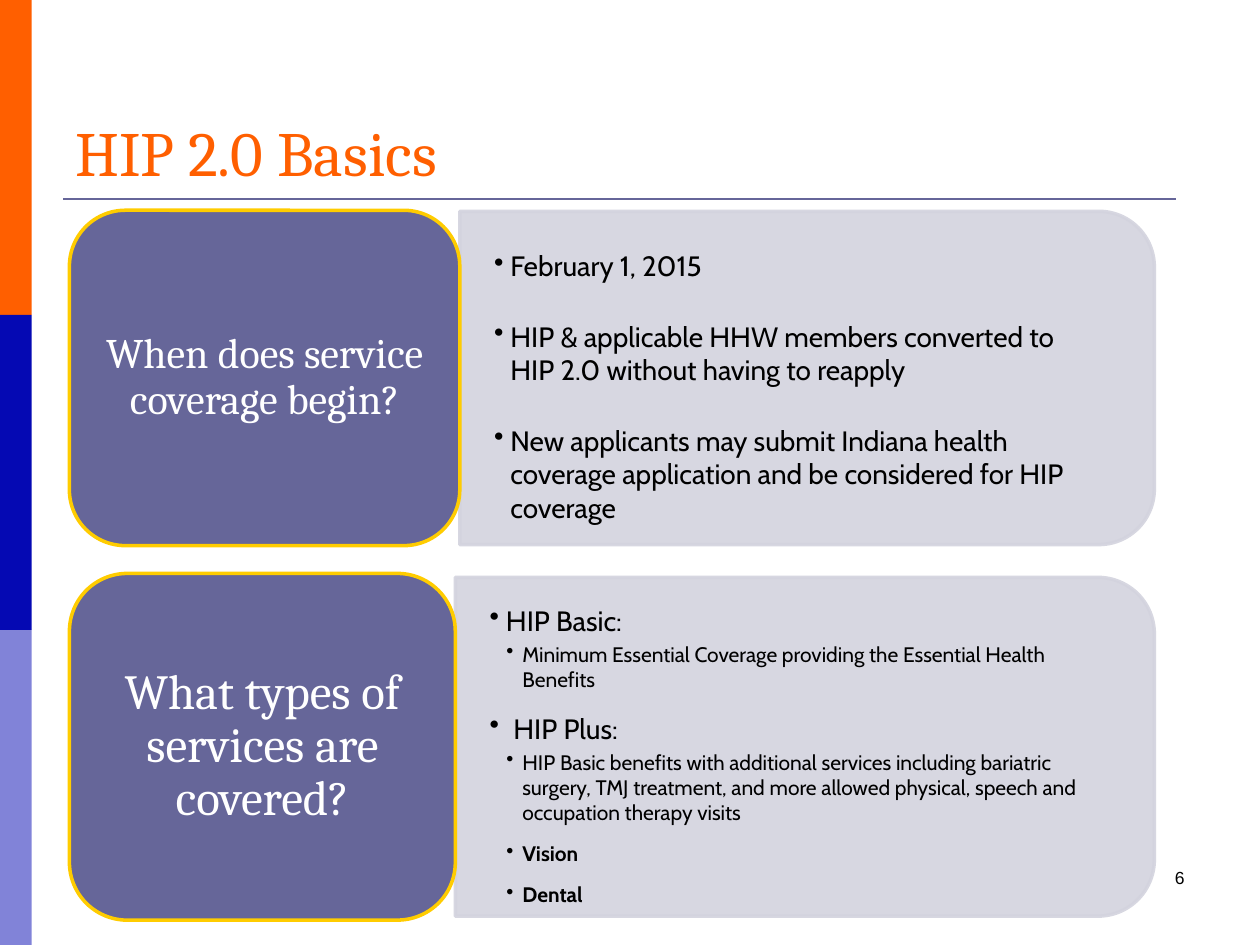
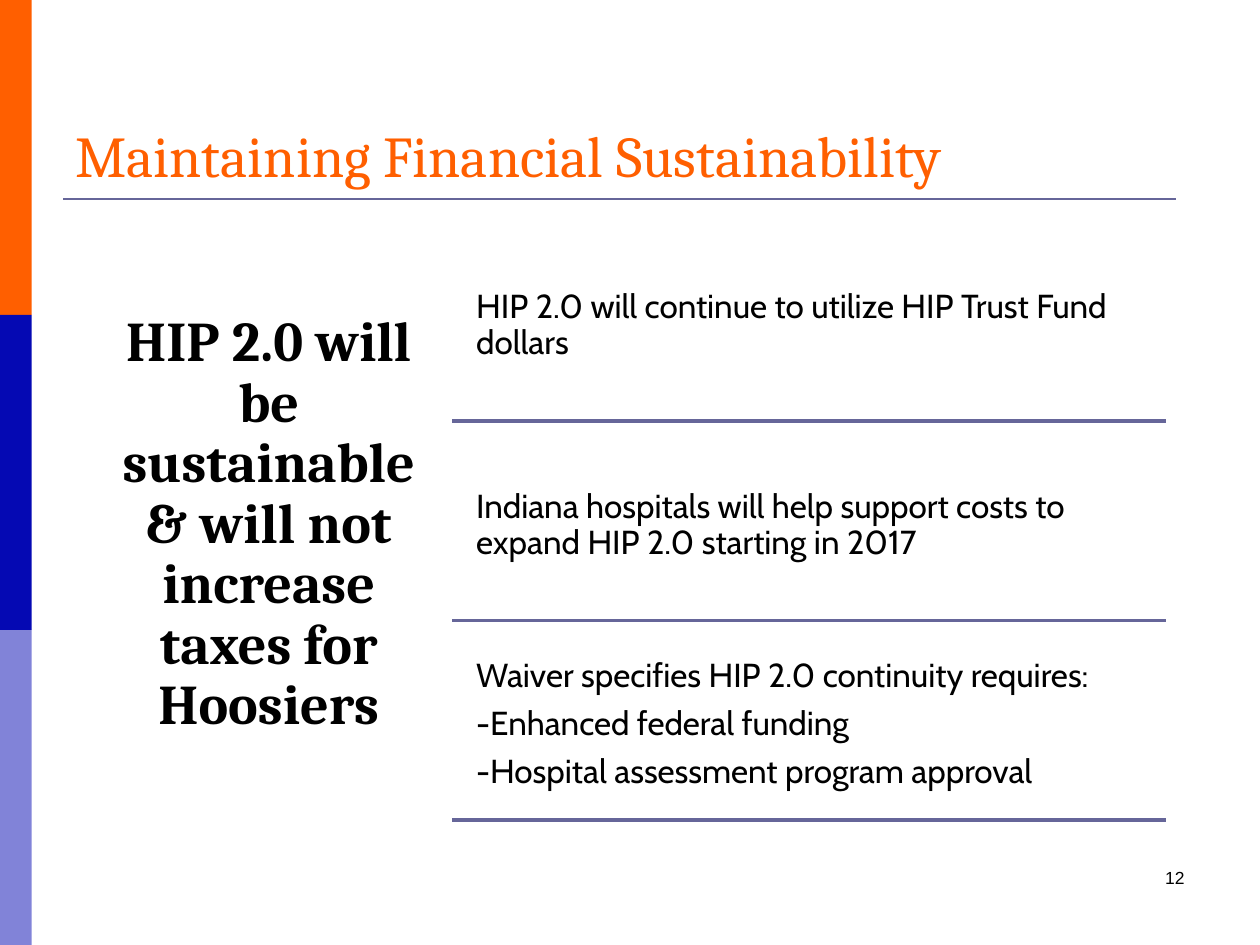
from dataclasses import dataclass

from lxml import etree
from pptx import Presentation
from pptx.dml.color import RGBColor
from pptx.enum.shapes import MSO_CONNECTOR, MSO_SHAPE
from pptx.enum.text import MSO_ANCHOR, MSO_AUTO_SIZE, PP_ALIGN
from pptx.oxml.ns import qn
from pptx.util import Cm, Pt

RECT = MSO_SHAPE.RECTANGLE
ROUND = MSO_SHAPE.ROUNDED_RECTANGLE
TAB = MSO_SHAPE.ROUND_2_SAME_RECTANGLE
LINE = MSO_CONNECTOR.STRAIGHT
LEFT, MID, RIGHT = PP_ALIGN.LEFT, PP_ALIGN.CENTER, PP_ALIGN.RIGHT
TOP, CENTER, BOTTOM = MSO_ANCHOR.TOP, MSO_ANCHOR.MIDDLE, MSO_ANCHOR.BOTTOM


@dataclass(frozen=True)
class Theme:
    orange: str = "FF5F00"
    navy: str = "0509B3"
    slate: str = "666699"
    gold: str = "FFCC00"
    mist: str = "D3D3DE"
    black: str = "000000"
    white: str = "FFFFFF"
    serif: str = "Cambria"
    sans: str = "Cabin"
    plain: str = "Arial"
    head: int = 36
    claim: int = 32
    large: int = 28
    label: int = 24
    point: int = 19
    body: int = 16
    small: int = 12
    foot: int = 10


THEME = Theme()


@dataclass(frozen=True)
class Box:
    x: float
    y: float
    w: float
    h: float

    def frame(self):
        return Cm(self.x), Cm(self.y), Cm(self.w), Cm(self.h)


@dataclass(frozen=True)
class Para:
    text: str
    size: int
    face: str = THEME.sans
    color: str = THEME.black
    bold: bool = False
    align: PP_ALIGN = LEFT
    pitch: float = 1
    after: float = 0
    level: int = 0
    left: float = 0
    hang: float = 0


def rgb(color):
    return RGBColor.from_string(color)


def fade(shape, share):
    for color in shape.element.spPr.iter(qn("a:srgbClr")):
        etree.SubElement(color, qn("a:alpha")).set("val", str(share * 1000))


def style(para, spec):
    para.text = spec.text
    para.alignment = spec.align
    para.level = spec.level
    para.line_spacing = spec.pitch
    para.space_before = Pt(0)
    para.space_after = Pt(spec.after)
    for run in para.runs:
        font = run.font
        font.size, font.name, font.bold = Pt(spec.size), spec.face, spec.bold
        font.color.rgb = rgb(spec.color)
    if spec.hang:
        props = para._p.get_or_add_pPr()
        props.set("marL", str(Cm(spec.left)))
        props.set("indent", str(-Cm(spec.hang)))
        etree.SubElement(props, qn("a:buChar")).set("char", "•")


def write(frame, paras, anchor=CENTER, inset=(0.25, 0.13)):
    frame.word_wrap = True
    frame.auto_size = MSO_AUTO_SIZE.NONE
    frame.vertical_anchor = anchor
    frame.margin_left = frame.margin_right = Cm(inset[0])
    frame.margin_top = frame.margin_bottom = Cm(inset[1])
    for num, spec in enumerate(paras):
        style(frame.add_paragraph() if num else frame.paragraphs[0], spec)


def add_text(slide, box, paras, anchor=CENTER, inset=(0.25, 0.13)):
    write(slide.shapes.add_textbox(*box.frame()).text_frame, paras, anchor, inset)


def add_form(slide, kind, box, fill, edge=None):
    shape = slide.shapes.add_shape(kind, *box.frame())
    shape.shadow.inherit = False
    shape.fill.solid()
    shape.fill.fore_color.rgb = rgb(fill)
    if edge:
        shape.line.color.rgb = rgb(edge)
        shape.line.width = Pt(2)
    else:
        shape.line.fill.background()
    return shape


def add_rule(slide, x, y, width, weight):
    rule = slide.shapes.add_connector(LINE, Cm(x), Cm(y), Cm(x + width), Cm(y))
    rule.line.color.rgb = rgb(THEME.slate)
    rule.line.width = Pt(weight)
    etree.SubElement(rule.element.spPr, qn("a:effectLst"))


def add_page(deck, title, size, number):
    slide = deck.slides.add_slide(deck.slide_layouts[5])
    step = 6.35
    for row, color in enumerate((THEME.orange, THEME.navy, THEME.navy)):
        band = add_form(slide, RECT, Box(0, row * step, 0.64, step), color)
        if row == 2:
            fade(band, 50)
    add_rule(slide, 1.27, 4.01, 22.43, 1.5)
    head = slide.shapes.title
    head.left, head.top, head.width, head.height = Box(1.27, 0.76, 22.86, 3.18).frame()
    write(head.text_frame, [Para(title, size, THEME.serif, THEME.orange)], BOTTOM)
    add_text(slide, Box(18.21, 17.35, 5.92, 1.27),
             [Para(number, THEME.foot, THEME.plain, align=RIGHT)], TOP)
    return slide


def add_panel(slide, box):
    shift = (box.w - box.h) / 2
    upright = Box(box.x + shift, box.y - shift, box.h, box.w)
    panel = add_form(slide, TAB, upright, THEME.mist, THEME.mist)
    panel.rotation = 90
    fade(panel, 90)


def add_card(slide, box, split, trim, label, size, inset, paras):
    panel = Box(box.x + split, box.y + trim, box.w - split, box.h - 2 * trim)
    add_panel(slide, panel)
    pad = 0.33
    add_text(slide, Box(panel.x, panel.y + pad, panel.w - pad, panel.h - 2 * pad),
             paras, inset=(0.69, 0.36))
    tile = add_form(slide, ROUND, Box(box.x, box.y, split, box.h), THEME.slate, THEME.gold)
    write(tile.text_frame,
          [Para(label, size, THEME.serif, THEME.white, align=MID, pitch=0.9)], inset=inset)


def add_list(slide, box, items):
    step = box.h / len(items)
    gap = 0.18
    for row, lines in enumerate(items):
        y = box.y + row * step
        paras = [Para(line, THEME.point, pitch=0.9, after=6.65) for line in lines]
        add_text(slide, Box(box.x + 0.28, y + gap, box.w - 0.28, step - gap),
                 paras, inset=(0.2, 0.2))
        add_rule(slide, box.x, y + step, box.w, 2)


def main_point(text, pitch=1.5, after=2.4, hang=0.33):
    return Para(text, THEME.body, pitch=pitch, after=after, left=hang, hang=hang)


def sub_point(text, pitch=1, bold=False):
    return Para(text, THEME.small, bold=bold, pitch=pitch, after=1.8,
                level=1, left=0.66, hang=0.32)


def add_basics(deck):
    slide = add_page(deck, "HIP 2.0 Basics", THEME.head, "6")
    add_card(slide, Box(1.4, 4.24, 21.87, 6.76), 7.87, 0.02,
             "When does service coverage begin?", THEME.label, (0.25, 0.13), [
                 main_point("February 1, 2015", after=21),
                 main_point("HIP & applicable HHW members converted to HIP 2.0 "
                            "without having to reapply", 1, 21),
                 main_point("New applicants may submit Indiana health coverage "
                            "application and be considered for HIP coverage", 1)])
    add_card(slide, Box(1.4, 11.56, 21.87, 6.99), 7.78, 0.08,
             "What types of services are covered?", THEME.large, (0.3, 0.15), [
                 main_point("HIP Basic:"),
                 sub_point("Minimum Essential Coverage providing the Essential "
                           "Health Benefits"),
                 main_point("HIP Plus:", hang=0.48),
                 sub_point("HIP Basic benefits with additional services including "
                           "bariatric surgery, TMJ treatment, and more allowed "
                           "physical, speech and occupation therapy visits"),
                 sub_point("Vision", 1.5, True),
                 sub_point("Dental", 1.5, True)])


def add_funding(deck):
    slide = add_page(deck, "Maintaining Financial Sustainability", 33, "12")
    claim = "HIP 2.0 will be sustainable & will not increase taxes for Hoosiers"
    add_text(slide, Box(1.7, 4.45, 7.44, 12.27),
             [Para(claim, THEME.claim, THEME.serif, bold=True, align=MID, pitch=0.9)],
             inset=(0.33, 0.33))
    add_list(slide, Box(9.12, 4.47, 14.38, 12.06), [
        ["HIP 2.0 will continue to utilize HIP Trust Fund dollars"],
        ["Indiana hospitals will help support costs to expand HIP 2.0 starting in 2017"],
        ["Waiver specifies HIP 2.0 continuity requires:",
         "-Enhanced federal funding",
         "-Hospital assessment program approval"]])


def main():
    deck = Presentation()
    deck.slide_width, deck.slide_height = Cm(25.4), Cm(19.05)
    add_basics(deck)
    add_funding(deck)
    deck.save("out.pptx")


if __name__ == "__main__":
    main()
